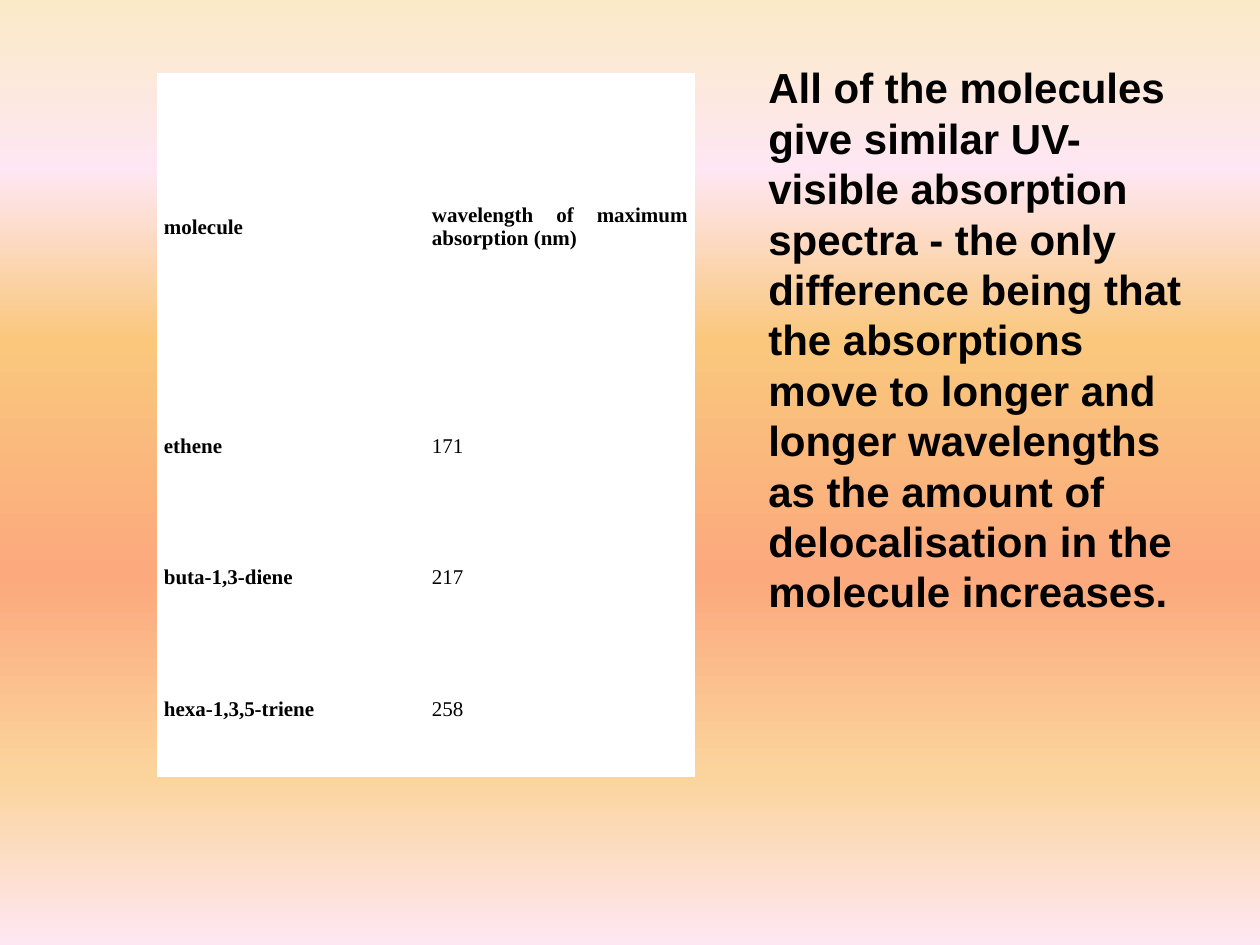
from dataclasses import dataclass

from pptx import Presentation
from pptx.dml.color import RGBColor
from pptx.enum.text import MSO_ANCHOR, MSO_AUTO_SIZE, PP_ALIGN
from pptx.oxml import parse_xml
from pptx.oxml.ns import nsdecls
from pptx.util import Emu, Pt

MIDDLE = MSO_ANCHOR.MIDDLE
GROW = MSO_AUTO_SIZE.SHAPE_TO_FIT_TEXT
LEFT, JUSTIFY = PP_ALIGN.LEFT, PP_ALIGN.JUSTIFY
EMU_PER_PX = 914400 / 126


@dataclass(frozen=True)
class Theme:
    """Colours, fonts and type sizes of the slide."""
    text: str = "000000"
    cell: str = "FFFFFF"
    table_font: str = "Times New Roman"
    body_font: str = "Arial"
    table_size: int = 12
    body_size: int = 24
    body_leading: float = 28.8
    gradient: tuple = ((0, "FBEAC7"), (18, "FEE7F2"), (36, "FAC77D"),
                       (61, "FBA97D"), (82, "FBD49C"), (100, "FEE7F2"))


THEME = Theme()
ROWS = (
    ("molecule", "wavelength of maximum absorption (nm)"),
    ("ethene", "171"),
    ("buta-1,3-diene", "217"),
    ("hexa-1,3,5-triene", "258"),
)
CONCLUSION = (
    "All of the molecules give similar UV-visible absorption spectra - the only "
    "difference being that the absorptions move to longer and longer wavelengths "
    "as the amount of delocalisation in the molecule increases."
)


def px(n):
    """Turn pixels into EMU."""
    return Emu(round(n * EMU_PER_PX))


def put_text(tf, text, *, font, size, bold=False, align=LEFT, leading=None):
    """Write one formatted paragraph into a text frame."""
    tf.word_wrap = True
    p = tf.paragraphs[0]
    p.alignment = align
    if leading:
        p.line_spacing = Pt(leading)
    r = p.add_run()
    r.text = text
    r.font.name = font
    r.font.size = Pt(size)
    r.font.bold = bold
    r.font.color.rgb = RGBColor.from_string(THEME.text)


def paint_background(s):
    """Fill the background with a vertical gradient of several stops."""
    stops = "".join(f'<a:gs pos="{pos * 1000}"><a:srgbClr val="{color}"/></a:gs>'
                    for pos, color in THEME.gradient)
    bg = parse_xml(
        f'<p:bg {nsdecls("p", "a")}><p:bgPr><a:gradFill rotWithShape="0">'
        f'<a:gsLst>{stops}</a:gsLst><a:lin ang="5400000" scaled="0"/>'
        '</a:gradFill><a:effectLst/></p:bgPr></p:bg>')
    s.element.cSld.insert(0, bg)


def add_wavelength_table(s, x, y, w, h, header_h=306, inset=6):
    """Place the table of molecules and wavelengths."""
    n_rows, n_cols = len(ROWS), len(ROWS[0])
    table = s.shapes.add_table(n_rows, n_cols, px(x), px(y), px(w), px(h)).table
    table.first_row = table.horz_banding = False
    for col in table.columns:
        col.width = px(w / n_cols)
    for i, values in enumerate(ROWS):
        table.rows[i].height = px(header_h if i == 0 else (h - header_h) / (n_rows - 1))
        for j, value in enumerate(values):
            cell = table.cell(i, j)
            cell.fill.solid()
            cell.fill.fore_color.rgb = RGBColor.from_string(THEME.cell)
            cell.vertical_anchor = MIDDLE
            cell.margin_left = cell.margin_right = px(inset)
            cell.margin_top = cell.margin_bottom = px(inset)
            put_text(cell.text_frame, value, font=THEME.table_font,
                     size=THEME.table_size, bold=i == 0 or j == 0, align=JUSTIFY)


def add_conclusion(s, x, y, w, h):
    """Place the statement beside the table."""
    tf = s.shapes.add_textbox(px(x), px(y), px(w), px(h)).text_frame
    tf.vertical_anchor = MIDDLE
    tf.auto_size = GROW
    put_text(tf, CONCLUSION, font=THEME.body_font, size=THEME.body_size,
             bold=True, leading=THEME.body_leading)


def main():
    """Build and save the slide."""
    prs = Presentation()
    prs.slide_width, prs.slide_height = px(1260), px(945)
    s = prs.slides.add_slide(prs.slide_layouts[6])
    paint_background(s)
    add_wavelength_table(s, 158, 74, 536, 702)
    add_conclusion(s, 756, 53, 451, 572)
    prs.save("out.pptx")


if __name__ == "__main__":
    main()
